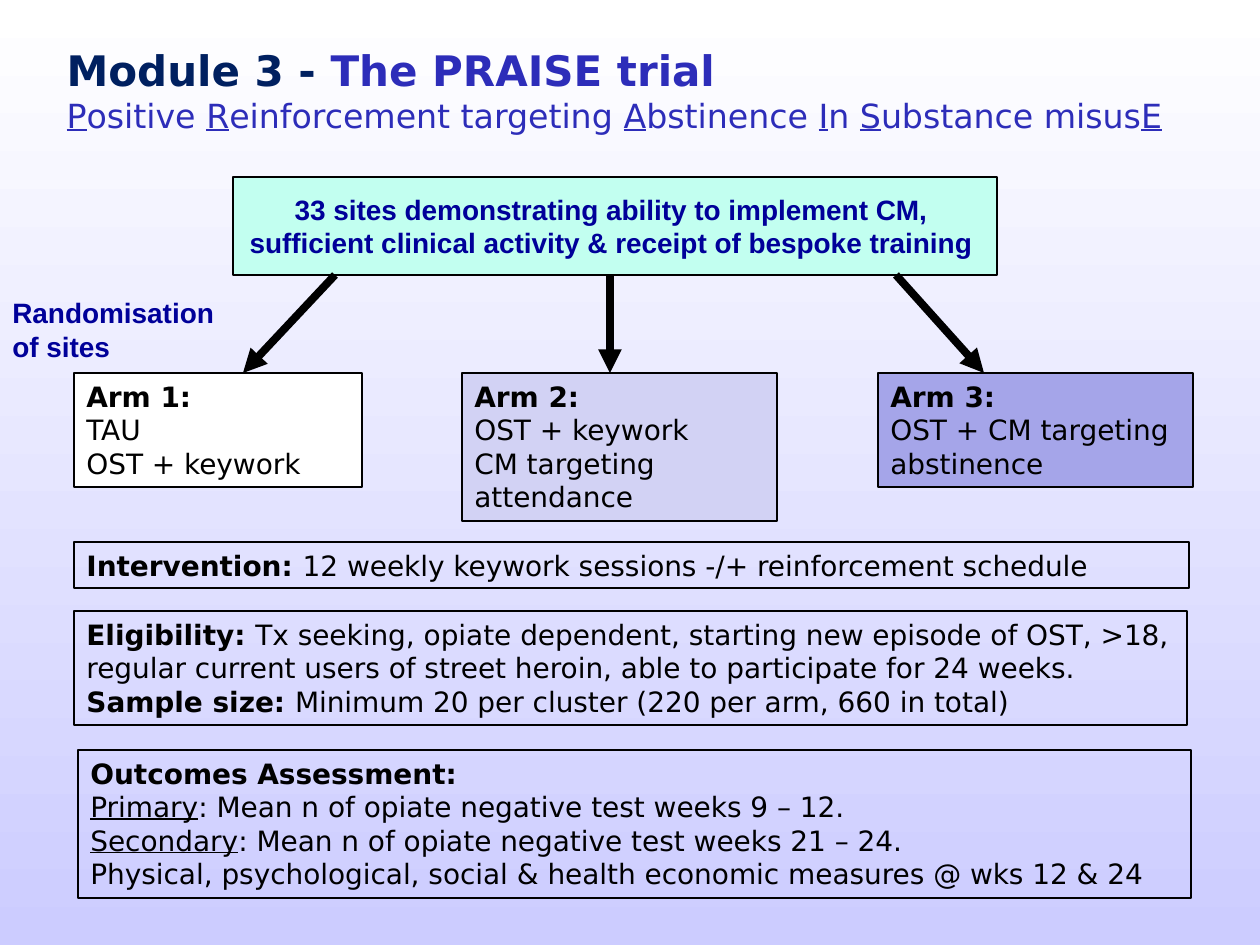
from copy import deepcopy

from lxml import etree
from pptx import Presentation
from pptx.dml.color import RGBColor
from pptx.enum.shapes import MSO_CONNECTOR, MSO_SHAPE
from pptx.enum.text import MSO_ANCHOR, MSO_AUTO_SIZE, PP_ALIGN
from pptx.oxml.ns import qn
from pptx.util import Emu, Pt

RECT, STRAIGHT = MSO_SHAPE.RECTANGLE, MSO_CONNECTOR.STRAIGHT
TOP, MIDDLE = MSO_ANCHOR.TOP, MSO_ANCHOR.MIDDLE
LEFT, CENTER = PP_ALIGN.LEFT, PP_ALIGN.CENTER
NO_FIT = MSO_AUTO_SIZE.NONE

SANS, ARIAL = "DejaVu Sans", "Arial"
BLACK, NAVY, BLUE, SITE_BLUE = "000000", "002060", "2D2DB9", "000099"


def px(n):
    return Emu(round(n * 914400 / 126))


def rgb(value):
    return RGBColor.from_string(value)


def add_run(p, text, size=16, font=SANS, color=BLACK, bold=False, underline=False):
    r = p.add_run()
    r.text = text
    f = r.font
    f.size, f.name, f.bold, f.underline = Pt(size), font, bold, underline
    f.color.rgb = rgb(color)
    return r


def add_break(p, r):
    """Line break that keeps the format of the run before it."""
    p.add_line_break()
    p._p[-1].append(deepcopy(r._r.rPr))


def set_text(shape, paragraphs, anchor=TOP, align=LEFT, **fmt):
    """Each paragraph is a list of (text, format) runs."""
    tf = shape.text_frame
    tf.word_wrap, tf.auto_size, tf.vertical_anchor = True, NO_FIT, anchor
    for i, runs in enumerate(paragraphs):
        p = tf.paragraphs[0] if i == 0 else tf.add_paragraph()
        p.alignment = align
        for text, own in runs:
            add_run(p, text, **{**fmt, **own})


def add_box(s, box, paragraphs, fill=None, **fmt):
    sp = s.shapes.add_shape(RECT, *map(px, box))
    sp.shadow.inherit = False
    if fill:
        sp.fill.solid()
        sp.fill.fore_color.rgb = rgb(fill)
    else:
        sp.fill.background()
    sp.line.color.rgb = rgb(BLACK)
    sp.line.width = Pt(0.75)
    set_text(sp, paragraphs, **fmt)


def add_arrow(s, x1, y1, x2, y2):
    c = s.shapes.add_connector(STRAIGHT, *map(px, (x1, y1, x2, y2)))
    c.line.color.rgb = rgb(BLACK)
    c.line.width = Pt(4.5)
    etree.SubElement(c.line._get_or_add_ln(), qn("a:tailEnd"), type="triangle")
    etree.SubElement(c._element.spPr, qn("a:effectLst"))


def add_background(s):
    fill = s.background.fill
    fill.gradient()
    fill.gradient_angle = 270
    for stop, color in zip(fill.gradient_stops, ("FFFFFF", "CCCCFF")):
        stop.color.rgb = rgb(color)


def add_title(s, box):
    title = s.shapes.title
    title.left, title.top, title.width, title.height = map(px, box)
    set_text(title, [[("Module 3 - ", {"color": NAVY}), ("The PRAISE trial ", {})]],
             anchor=MIDDLE, size=24, color=BLUE, bold=True)
    p = title.text_frame.paragraphs[0]
    add_break(p, p.runs[-1])
    # The underlined letters spell the acronym
    for initial, rest in (("P", "ositive "), ("R", "einforcement targeting "),
                          ("A", "bstinence "), ("I", "n "),
                          ("S", "ubstance misus"), ("E", "")):
        r = add_run(p, initial, size=19, color=BLUE, underline=True)
        if rest:
            add_run(p, rest, size=19, color=BLUE)
    add_break(p, r)


def add_trial_flow(s, x, y):
    """Sites, randomisation and the three arms, from the left edge and top given."""
    site_fmt = {"font": ARIAL, "color": SITE_BLUE, "bold": True, "anchor": MIDDLE}
    add_box(s, (x + 233, y, 764, 98),
            [[("33 sites demonstrating ability to implement CM, ", {})],
             [("sufficient clinical activity & receipt of bespoke training ", {})]],
            fill="C2FFF0", align=CENTER, **site_fmt)
    label = s.shapes.add_textbox(*map(px, (x, y + 118, 325, 69)))
    set_text(label, [[("Randomisation", {})], [("of sites", {})]], **site_fmt)

    arms = (
        (74, 288, 114, "FFFFFF", "Arm 1:", ("TAU", "OST + keywork")),
        (462, 315, 148, "D2D2F4", "Arm 2:", ("OST + keywork", "CM targeting attendance")),
        (878, 315, 114, "A5A5E9", "Arm 3:", ("OST + CM targeting abstinence",)),
    )
    for left, width, height, fill, name, lines in arms:
        add_box(s, (x + left, y + 196, width, height),
                [[(name, {"bold": True})]] + [[(line, {})] for line in lines], fill=fill)
    for start, end in ((335, 243), (610, 610), (896, 984)):
        add_arrow(s, x + start, y + 98, x + end, y + 196)


def add_details(s, x, y):
    """Stacked outline boxes under the arms."""
    bold, under = {"bold": True}, {"underline": True}
    add_box(s, (x, y, 1115, 46),
            [[("Intervention: ", bold),
              ("12 weekly keywork sessions -/+ reinforcement schedule", {})]])
    add_box(s, (x, y + 69, 1113, 114),
            [[("Eligibility: ", bold),
              ("Tx seeking, opiate dependent, starting new episode of OST, >18, "
               "regular current users of street heroin, able to participate "
               "for 24 weeks.", {})],
             [("Sample size: ", bold),
              ("Minimum 20 per cluster (220 per arm, 660 in total)", {})]])
    add_box(s, (x + 4, y + 208, 1113, 148),
            [[("Outcomes Assessment:", bold)],
             [("Primary", under), (": Mean n of opiate negative test weeks 9 – 12.", {})],
             [("Secondary", under), (": Mean n of opiate negative test weeks 21 – 24.", {})],
             [("Physical, psychological, social & health economic measures "
               "@ wks 12 & 24", {})]])


def main():
    prs = Presentation()
    prs.slide_width, prs.slide_height = px(1260), px(945)
    s = prs.slides.add_slide(prs.slide_layouts[5])  # title only
    add_background(s)
    add_title(s, (54, 65, 1160, 90))
    add_trial_flow(s, 0, 177)
    add_details(s, 74, 542)
    prs.save("out.pptx")


if __name__ == "__main__":
    main()
